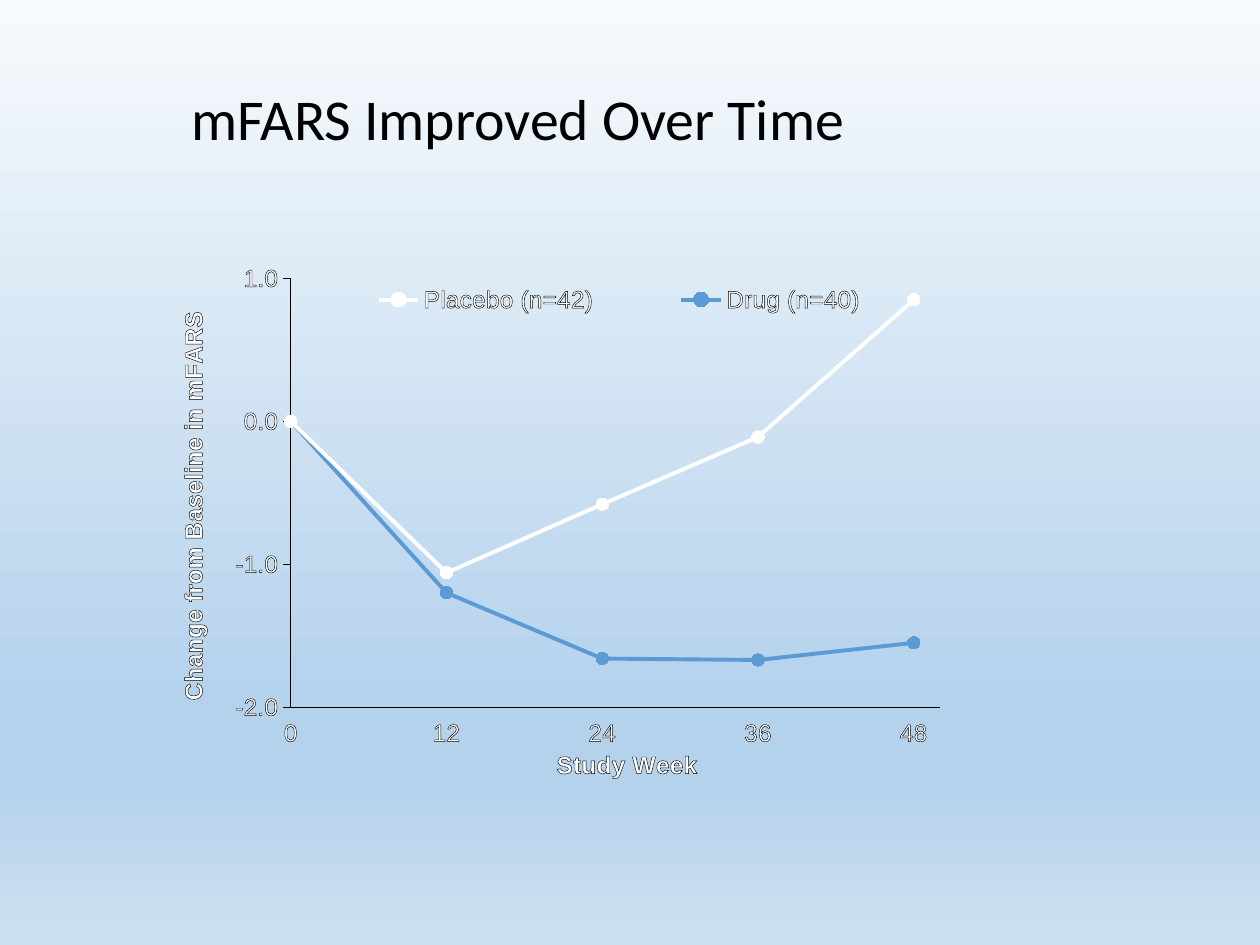
from lxml import etree
from pptx import Presentation, util as u
from pptx.chart.data import XyChartData
from pptx.dml.color import RGBColor
from pptx.enum import chart as ch, text
from pptx.oxml import parse_xml
from pptx.oxml.ns import nsdecls, qn

rgb = RGBColor.from_string


def add_text(tf, content, font="Arial", size=14, color="FFFFFF", bold=False):
    p = tf.paragraphs[0]
    r = p.add_run()
    r.text = content
    r.font.name, r.font.size, r.font.bold = font, u.Pt(size), bold
    r.font.color.rgb = rgb(color)
    return p


def place(element, inner=False, **box):
    """Give a chart part a manual layout in fractions of the chart."""
    for old in element.findall(qn("c:layout")):
        element.remove(old)
    layout = parse_xml(f"<c:layout {nsdecls('c')}><c:manualLayout/></c:layout>")
    values = {"layoutTarget": "inner"} if inner else {}
    values.update(xMode="edge", yMode="edge", **box)
    for tag, value in values.items():
        etree.SubElement(layout[0], qn("c:" + tag)).set("val", str(value))
    before = [c for c in element if c.tag in (qn("c:tx"), qn("c:legendPos"))]
    element.insert(len(before), layout)


prs = Presentation()
prs.slide_width, prs.slide_height = u.Inches(10), u.Inches(7.5)
s = prs.slides.add_slide(prs.slide_layouts[6])

# Background gradient
stops = [(0, "F7FAFD"), (74, "B5D2EC"), (83, "B5D2EC"), (100, "CEE1F2")]
fill = s.background.fill
fill.gradient()
fill.gradient_angle = 270
gs_list = s.background._cSld.find(".//" + qn("a:gsLst"))
for gs in list(gs_list):
    gs_list.remove(gs)
for pos, color in stops:
    gs_list.append(parse_xml(
        f'<a:gs {nsdecls("a")} pos="{pos * 1000}"><a:srgbClr val="{color}"/></a:gs>'))

# Chart data
weeks = [0, 12, 24, 36, 48]
arms = [
    ("Placebo (n=42)", "FFFFFF", [0, -1.06, -0.58, -0.11, 0.85]),
    ("Drug (n=40)", "5B9BD5", [0, -1.2, -1.66, -1.67, -1.55]),
]
data = XyChartData()
for name, _, changes in arms:
    series = data.add_series(name)
    for week, change in zip(weeks, changes):
        series.add_data_point(week, change)
chart = s.shapes.add_chart(ch.XL_CHART_TYPE.XY_SCATTER_LINES, u.Inches(1.17), u.Inches(2),
                           u.Inches(6.69), u.Inches(4.24), data).chart
chart.has_title = False
plot = chart.plots[0]
plot.vary_by_categories = False
place(chart._chartSpace.find(".//" + qn("c:plotArea")), inner=True,
      x=0.17, y=0.05, w=0.77, h=0.81)

# Series lines and markers
for series, (_, color, _) in zip(plot.series, arms):
    series.smooth = False
    series.format.line.color.rgb = rgb(color)
    series.format.line.width = u.Pt(2.25)
    series.marker.style = ch.XL_MARKER_STYLE.CIRCLE
    series.marker.size = 7
    series.marker.format.fill.solid()
    series.marker.format.fill.fore_color.rgb = rgb(color)
    series.marker.format.line.color.rgb = rgb(color)

# Axes
tick = ch.XL_TICK_MARK
axes = [
    (chart.category_axis, "Study Week", 0, 50, 12, tick.NONE, "General", (0.48, 0.93)),
    (chart.value_axis, "Change from Baseline in mFARS", -2, 1, 1, tick.OUTSIDE,
     "#,##0.0", (0.03, 0.11)),
]
for axis, title, low, high, step, mark, fmt, (x, y) in axes:
    axis.has_major_gridlines = False
    axis.minimum_scale, axis.maximum_scale, axis.major_unit = low, high, step
    axis.major_tick_mark, axis.minor_tick_mark = mark, tick.NONE
    axis.tick_label_position = ch.XL_TICK_LABEL_POSITION.LOW
    axis.crosses = ch.XL_AXIS_CROSSES.MINIMUM
    axis.tick_labels.number_format = fmt
    axis.tick_labels.number_format_is_linked = False
    axis.format.line.color.rgb = rgb("000000")
    axis.format.line.width = u.Pt(0.75)
    add_text(axis.axis_title.text_frame, title, bold=True)
    place(axis.axis_title._element, x=x, y=y)
body = chart.value_axis.axis_title._element.find(".//" + qn("a:bodyPr"))
body.set("rot", "-5400000")
body.set("vert", "horz")

# Legend across the top of the plot
chart.has_legend = True
chart.legend.position = ch.XL_LEGEND_POSITION.RIGHT
chart.legend.include_in_layout = True
place(chart.legend._element, x=0.18, y=0.06, w=0.76, h=0.06)

# White lettering with a thin black outline
for part in (chart, chart.legend, chart.category_axis.tick_labels,
             chart.value_axis.tick_labels):
    part.font.name, part.font.size, part.font.bold = "Arial", u.Pt(14), False
    part.font.color.rgb = rgb("FFFFFF")
for props in chart._chartSpace.iter(qn("a:defRPr"), qn("a:rPr")):
    props.insert(0, parse_xml(
        f'<a:ln {nsdecls("a")} w="3175"><a:solidFill><a:srgbClr val="000000"/>'
        '</a:solidFill></a:ln>'))

# Title
tf = s.shapes.add_textbox(u.Inches(1.42), u.Inches(0.67),
                          u.Inches(9.12), u.Inches(0.93)).text_frame
tf.word_wrap = True
tf.vertical_anchor = text.MSO_ANCHOR.TOP
add_text(tf, "mFARS Improved Over Time", font="Calibri", size=33,
         color="000000").line_spacing = 0.9

prs.save("out.pptx")
